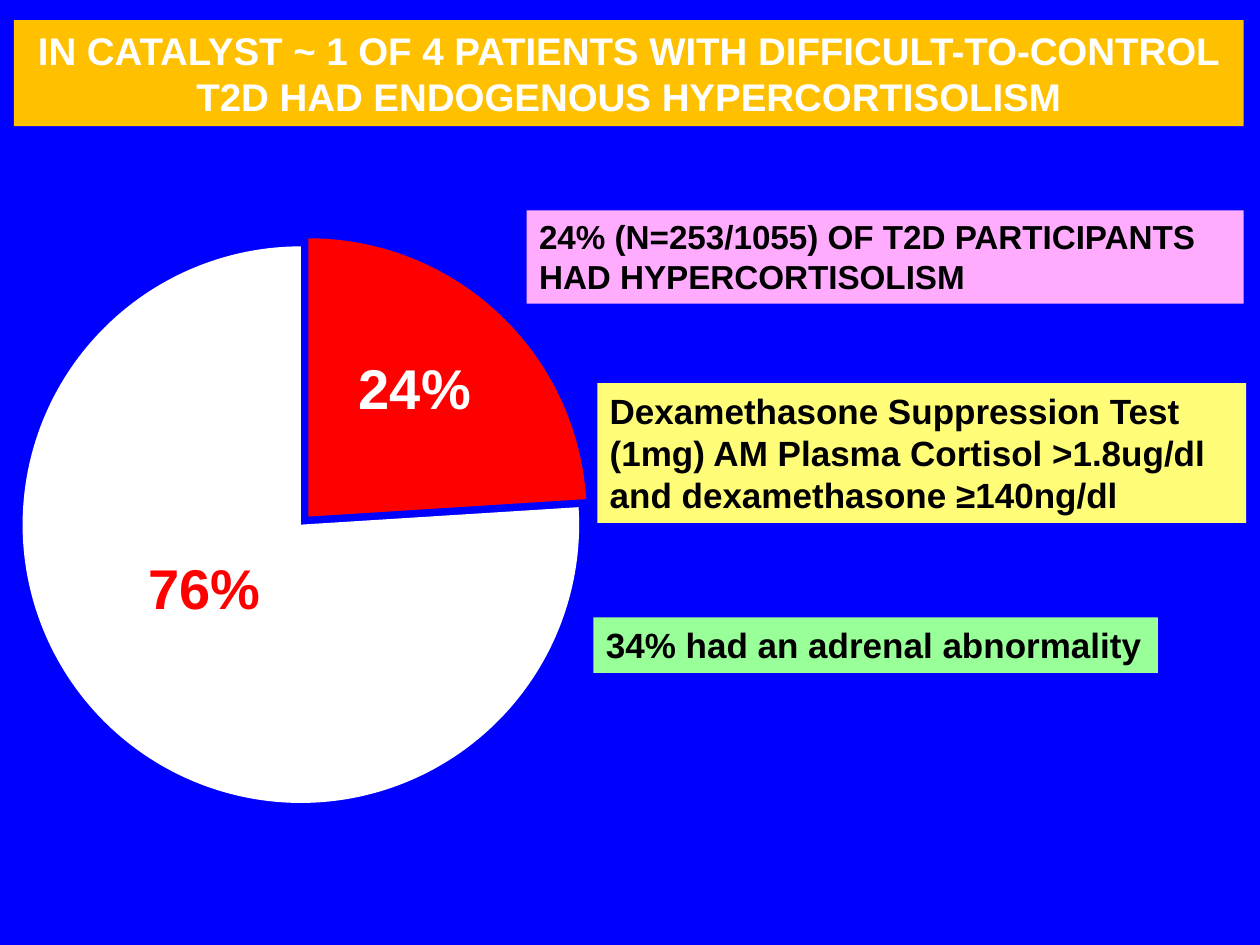
import pptx
import pptx.util
import pptx.chart.data
from pptx.dml.color import RGBColor
from pptx.enum.chart import XL_CHART_TYPE
from pptx.enum.shapes import MSO_SHAPE
from pptx.enum.text import MSO_ANCHOR, MSO_AUTO_SIZE, PP_ALIGN
from pptx.oxml import parse_xml
from pptx.oxml.ns import nsdecls
from pptx.util import Inches, Pt

BLUE = RGBColor(0x00, 0x00, 0xFF)
GOLD = RGBColor(0xFF, 0xC0, 0x00)
RED = RGBColor(0xFF, 0x00, 0x00)
WHITE = RGBColor(0xFF, 0xFF, 0xFF)
BLACK = RGBColor(0x00, 0x00, 0x00)
PINK = RGBColor(0xFF, 0xAC, 0xFF)
YELLOW = RGBColor(0xFF, 0xFD, 0x78)
GREEN = RGBColor(0x99, 0xFF, 0x99)

# Content; boxes are left, top, width, height in inches
TITLE = ("IN CATALYST ~ 1 OF 4 PATIENTS WITH DIFFICULT-TO-CONTROL "
         "T2D HAD ENDOGENOUS HYPERCORTISOLISM")
TITLE_BOX = (0.11, 0.16, 9.76, 0.84)
CHART_BOX = (-1.15, 1.81, 7.07, 4.71)
PIE_SIZE = 4.42
SLICES = [("1", 24, RED), ("2", 76, WHITE)]
FINDINGS = [  # text, box, fill, size, wrap
    ("24% (N=253/1055) OF T2D PARTICIPANTS HAD HYPERCORTISOLISM",
     (4.18, 1.67, 5.69, 0.74), PINK, 19, True),
    ("Dexamethasone Suppression Test (1mg) AM Plasma Cortisol >1.8ug/dl "
     "and dexamethasone ≥140ng/dl",
     (4.74, 3.04, 5.15, 1.11), YELLOW, 20, True),
    ("34% had an adrenal abnormality",
     (4.71, 4.9, 4.48, 0.44), GREEN, 20, False),
]
SHARES = [  # text, box, colour
    ("76%", (1.08, 4.34, 1.1, 0.64), RED),
    ("24%", (2.75, 2.76, 1.1, 0.64), WHITE),
]


def inches(box):
    return [Inches(v) for v in box]


def write(sp, text, size, color, align=PP_ALIGN.LEFT, wrap=True,
          anchor=MSO_ANCHOR.TOP):
    tf = sp.text_frame
    tf.word_wrap = wrap
    tf.auto_size = MSO_AUTO_SIZE.SHAPE_TO_FIT_TEXT
    tf.vertical_anchor = anchor
    p = tf.paragraphs[0]
    p.alignment = align
    r = p.add_run()
    r.text = text
    r.font.name = "Arial"
    r.font.size = Pt(size)
    r.font.bold = True
    r.font.color.rgb = color


prs = pptx.Presentation()
prs.slide_width, prs.slide_height = Inches(10), Inches(7.5)
s = prs.slides.add_slide(prs.slide_layouts[5])
s.background.fill.solid()
s.background.fill.fore_color.rgb = BLUE

# Title band
title = s.shapes.title
title.left, title.top, title.width, title.height = inches(TITLE_BOX)
title.fill.solid()
title.fill.fore_color.rgb = GOLD
write(title, TITLE, 22, WHITE, PP_ALIGN.CENTER, anchor=MSO_ANCHOR.MIDDLE)

# Pie chart
data = pptx.chart.data.CategoryChartData()
data.categories = [name for name, _, _ in SLICES]
data.add_series("Series 1", [value for _, value, _ in SLICES])
chart = s.shapes.add_chart(XL_CHART_TYPE.PIE, *inches(CHART_BOX), data).chart
chart.has_legend = False
chart.has_title = False
chart.font.name = "Calibri"
chart.font.size = Pt(10)
chart.font.color.rgb = BLACK
plot = chart.plots[0]
plot.vary_by_categories = True
series = plot.series[0]
for i, (_, _, color) in enumerate(SLICES):
    fmt = series.points[i].format
    fmt.fill.solid()
    fmt.fill.fore_color.rgb = color
    fmt.line.fill.background()

# Pull the first slice out a little
first = series._element.find(".//" + pptx.oxml.ns.qn("c:dPt"))
first.find(pptx.oxml.ns.qn("c:spPr")).addprevious(
    parse_xml(f'<c:explosion {nsdecls("c")} val="4"/>'))

# Centre the pie in the chart frame
w, h = (round(PIE_SIZE / side, 3) for side in CHART_BOX[2:])
area = chart._chartSpace.chart.plotArea
for old in area.findall(pptx.oxml.ns.qn("c:layout")):
    area.remove(old)
area.insert(0, parse_xml(
    f'<c:layout {nsdecls("c")}><c:manualLayout><c:layoutTarget val="inner"/>'
    '<c:xMode val="edge"/><c:yMode val="edge"/>'
    f'<c:x val="{(1 - w) / 2:.3f}"/><c:y val="{(1 - h) / 2:.3f}"/>'
    f'<c:w val="{w}"/><c:h val="{h}"/></c:manualLayout></c:layout>'))

# Finding boxes
for text, box, fill, size, wrap in FINDINGS:
    sp = s.shapes.add_shape(MSO_SHAPE.RECTANGLE, *inches(box))
    sp.shadow.inherit = False
    sp.fill.solid()
    sp.fill.fore_color.rgb = fill
    sp.line.fill.background()
    write(sp, text, size, BLACK, wrap=wrap)

# Share labels on the slices
for text, box, color in SHARES:
    write(s.shapes.add_textbox(*inches(box)), text, 32, color, wrap=False)

prs.save("out.pptx")
